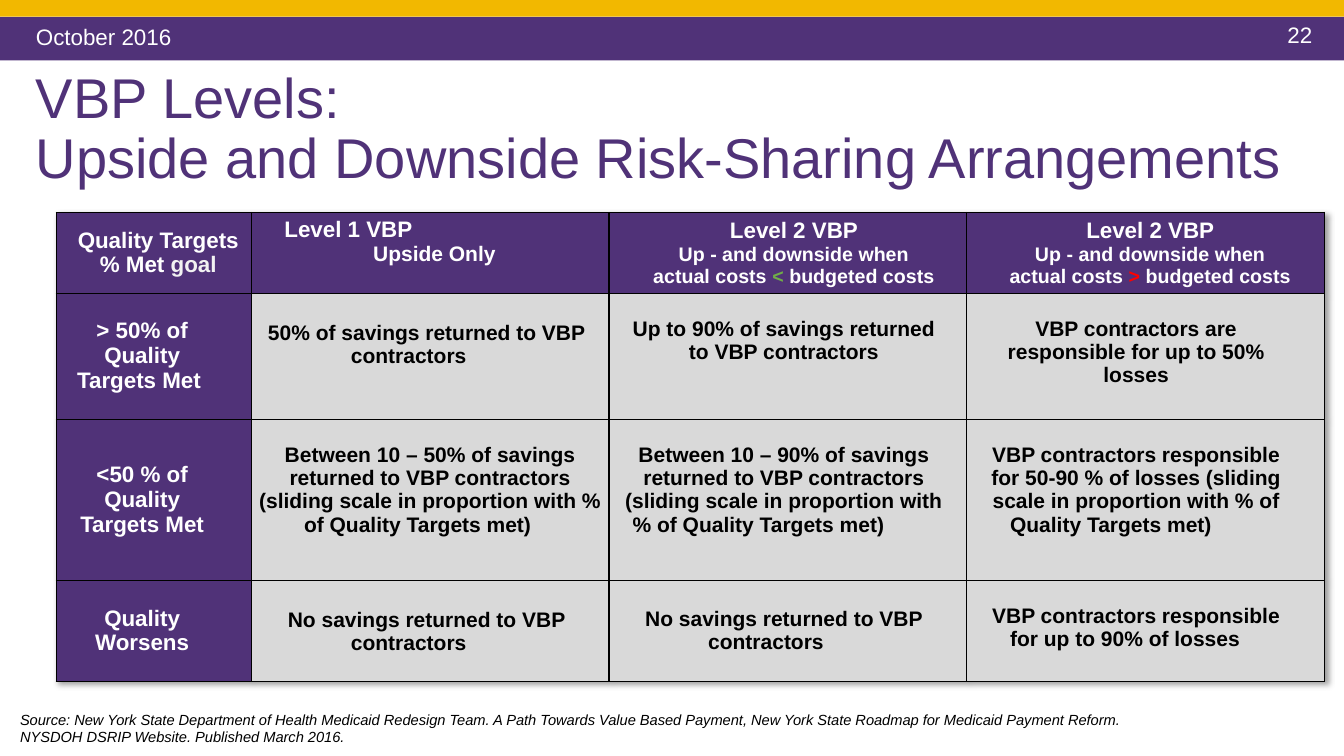
from dataclasses import dataclass
from lxml import etree
from pptx import Presentation, util as u
from pptx.dml import color
from pptx.enum import shapes, text
from pptx.oxml import ns


@dataclass(frozen=True)
class Theme:
    """Colours as RRGGBB and type sizes in points."""
    font: str = "Arial"
    plum: str = "503278"
    gold: str = "F2B800"
    grey: str = "D9D9D9"
    pale: str = "F2F2F2"
    white: str = "FFFFFF"
    black: str = "000000"
    green: str = "70AD47"
    red: str = "FF0000"
    title: float = 40
    head: float = 16
    body: float = 15
    sub: float = 14
    note: float = 10.5


class Deck:
    """Draws on one slide, with lengths in columns and rows of a 160 by 90 grid."""

    def __init__(self, theme):
        self.theme = theme
        self.prs = Presentation()
        self.prs.slide_width = u.Inches(13.33)
        self.prs.slide_height = u.Inches(7.5)
        self.slide = self.prs.slides.add_slide(self.prs.slide_layouts[6])

    def col(self, n):
        return round(self.prs.slide_width * n / 160)

    def row(self, n):
        return round(self.prs.slide_height * n / 90)

    def place(self, x, y, w, h):
        return self.col(x), self.row(y), self.col(w), self.row(h)

    def paint(self, item, tone):
        item.fill.solid()
        item.fill.fore_color.rgb = color.RGBColor.from_string(tone)

    def band(self, at, tone):
        box = self.slide.shapes.add_shape(shapes.MSO_SHAPE.RECTANGLE, *self.place(*at))
        box.shadow.inherit = False
        self.paint(box, tone)
        box.line.fill.background()

    def run(self, para, words, size, tone, bold=False, slant=False):
        run = para.add_run()
        run.text = words
        font = run.font
        font.name, font.size = self.theme.font, u.Pt(size)
        font.bold, font.italic = bold, slant
        font.color.rgb = color.RGBColor.from_string(tone)

    def label(self, at, lines, size, tone, mid=False, pad=0.05, lead=None,
              slant=False, wrap=True, align=text.PP_ALIGN.LEFT):
        frame = self.slide.shapes.add_textbox(*self.place(*at)).text_frame
        frame.word_wrap = wrap
        frame.margin_top = frame.margin_bottom = u.Inches(pad)
        frame.vertical_anchor = text.MSO_ANCHOR.MIDDLE if mid else text.MSO_ANCHOR.TOP
        para = frame.paragraphs[0]
        para.alignment = align
        para.line_spacing = lead
        for i, line in enumerate(lines):
            if i:
                para.add_line_break()
            self.run(para, line, size, tone, slant=slant)

    def table(self, at, cols, rows):
        grid = self.slide.shapes.add_table(len(rows), len(cols), *self.place(*at)).table
        for i, wide in enumerate(cols):
            grid.columns[i].width = self.col(wide)
        for i, high in enumerate(rows):
            grid.rows[i].height = self.row(high)
        fx = etree.fromstring(
            f'<a:effectLst {ns.nsdecls("a")}><a:outerShdw blurRad="50800" dist="38100" '
            'dir="2700000" algn="tl" rotWithShape="0"><a:prstClr val="black">'
            '<a:alpha val="40000"/></a:prstClr></a:outerShdw></a:effectLst>')
        grid._tbl.tblPr.insert(0, fx)
        return grid

    def cell(self, cell, paras, tone, left=0.09, right=0, top=None, indents=()):
        cell.margin_left, cell.margin_right = u.Inches(left), u.Inches(right)
        cell.margin_top, cell.margin_bottom = u.Inches(top or 0), 0
        cell.vertical_anchor = text.MSO_ANCHOR.MIDDLE if top is None else text.MSO_ANCHOR.TOP
        self.paint(cell, tone)
        props = cell._tc.get_or_add_tcPr()
        for i, side in enumerate("LRTB"):
            props.insert(i, etree.fromstring(
                f'<a:ln{side} {ns.nsdecls("a")} w="12700"><a:solidFill>'
                f'<a:srgbClr val="{self.theme.black}"/></a:solidFill></a:ln{side}>'))
        for i, runs in enumerate(paras):
            para = cell.text_frame.paragraphs[0] if i == 0 else cell.text_frame.add_paragraph()
            para.alignment = text.PP_ALIGN.CENTER
            if indents:
                para.alignment = text.PP_ALIGN.LEFT
                para._p.get_or_add_pPr().set("marL", str(u.Inches(indents[i])))
            for words, size, ink in runs:
                self.run(para, words, size, ink, bold=True)


def main():
    t = Theme()
    deck = Deck(t)
    deck.band((0, 2, 160, 5.2), t.plum)
    deck.band((0, 0, 160, 2), t.gold)
    deck.label((151.7, 1.9, 5.7, 4.5), ["22"], t.head, t.white, wrap=False,
               align=text.PP_ALIGN.RIGHT)
    deck.label((3.1, 8.6, 156, 13.8),
               ["VBP Levels: ", "Upside and Downside Risk-Sharing Arrangements"],
               t.title, t.plum, mid=True, lead=0.9)
    deck.label((3.1, 1.9, 72, 4.8), ["October 2016"], t.head, t.white, mid=True, pad=0)
    deck.label((1.2, 84, 134.2, 5.4),
               ["Source: New York State Department of Health Medicaid Redesign Team. "
                "A Path Towards Value Based Payment, New York State Roadmap for Medicaid "
                "Payment Reform. NYSDOH DSRIP Website. Published March 2016."],
               t.note, t.black, slant=True)

    grid = deck.table((6.7, 25.3, 151, 55.8), [23.2] + [42.6] * 3, [9.6, 15, 19.2, 12])
    deck.cell(grid.cell(0, 0), [[("Quality Targets % Met ", t.head, t.white),
                                 ("goal", t.head, t.pale)]], t.plum)
    deck.cell(grid.cell(0, 1), [[("Level 1 VBP", t.head, t.white)],
                                [("Upside Only", t.body, t.white)]],
              t.plum, left=0, top=0.05, indents=(0.33, 1.21))
    for c, sign, ink, left in [(2, "<", t.green, 0.12), (3, ">", t.red, 0.09)]:
        deck.cell(grid.cell(0, c), [
            [("Level 2 VBP", t.head, t.white)],
            [("Up - and downside when", t.sub, t.white)],
            [("actual costs ", t.sub, t.white), (sign, t.sub, ink),
             (" budgeted costs", t.sub, t.white)]], t.plum, left=left)

    scale = "(sliding scale in proportion with % of Quality Targets met) \t"
    body = [
        ("> 50% of Quality Targets Met ",
         ("50% of savings returned to VBP contractors \t", 0.09, 0.16, 0.28),
         ("Up to 90% of savings returned to VBP contractors", 0.12, 0.2, 0.24),
         ("VBP contractors are responsible for up to 50% losses", 0.09, 0.28, 0.24)),
        ("<50 % of Quality Targets Met",
         ("Between 10 – 50% of savings returned to VBP contractors " + scale, 0, 0, 0.24),
         ("Between 10 – 90% of savings returned to VBP contractors " + scale, 0.12, 0.2, 0.24),
         ("VBP contractors responsible for 50-90 % of losses " + scale, 0.09, 0.28, 0.24)),
        ("Quality Worsens",
         ("No savings returned to VBP contractors \t", 0.09, 0.16, 0.28),
         ("No savings returned to VBP contractors \t", 0.12, 0.2, 0.27),
         ("VBP contractors responsible for up to 90% of losses \t", 0.09, 0.28, 0.24)),
    ]
    for r, (goal, *terms) in enumerate(body, 1):
        deck.cell(grid.cell(r, 0), [[(goal, t.head, t.white)]], t.plum, right=0.32)
        for c, (words, left, right, top) in enumerate(terms, 1):
            deck.cell(grid.cell(r, c), [[(words, t.body, t.black)]], t.grey,
                      left=left, right=right, top=top)
    deck.prs.save("out.pptx")


if __name__ == "__main__":
    main()
